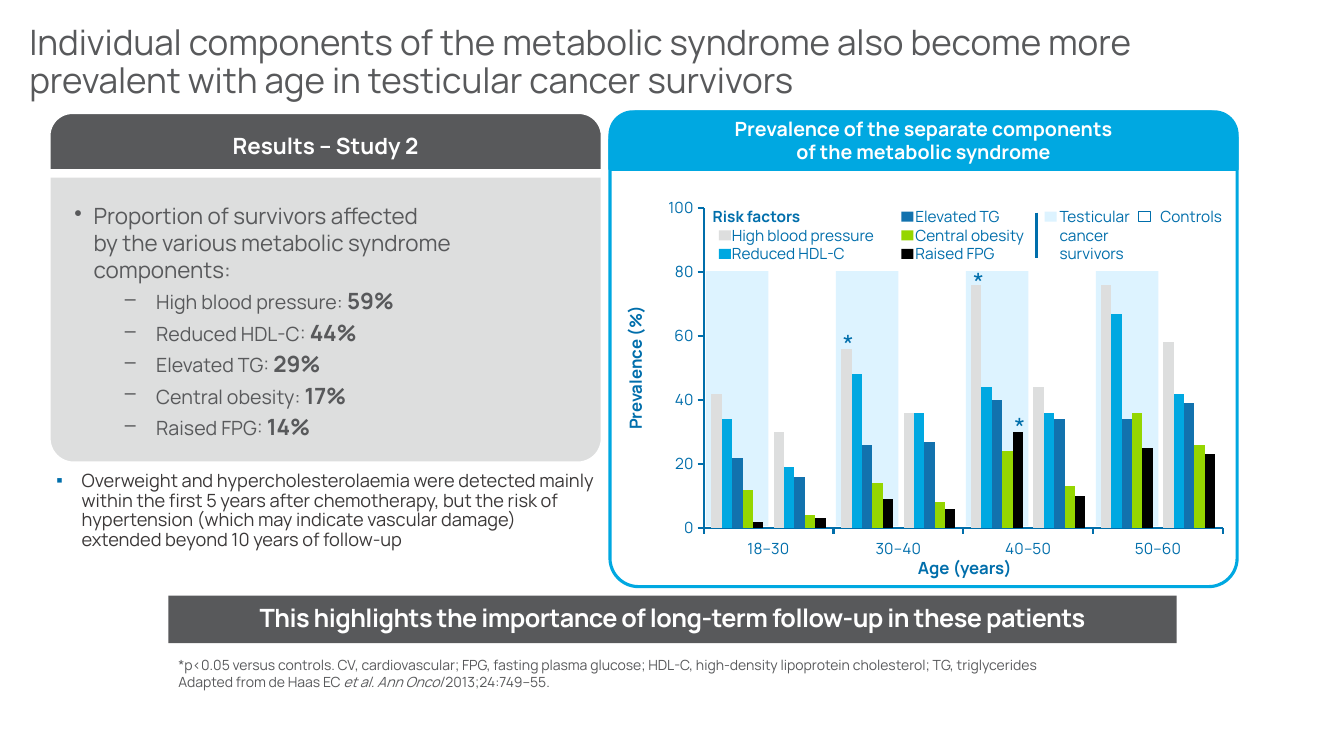
import dataclasses
import typing

import lxml.etree
import pptx
import pptx.chart.data
import pptx.dml.color
import pptx.enum.chart
import pptx.enum.shapes
import pptx.enum.text
import pptx.oxml
import pptx.oxml.ns
import pptx.util

Inches = pptx.util.Inches
Pt = pptx.util.Pt
qn = pptx.oxml.ns.qn
Shape = pptx.enum.shapes.MSO_SHAPE
Align = pptx.enum.text.PP_ALIGN
Anchor = pptx.enum.text.MSO_ANCHOR
Tick = pptx.enum.chart.XL_TICK_MARK

FONT = "Manrope"
HEX = {"slate": "58595B", "ink": "3B3838", "white": "FFFFFF", "silver": "DDDEDE", "sky": "00A8E1",
       "blue": "1272AE", "navy": "006EAB", "lime": "95D600", "black": "000000", "pale": "DDF3FF"}
Area = tuple[float, float, float, float]


@dataclasses.dataclass
class Bit:
    text: str
    size: float
    color: str = "slate"
    bold: bool = False
    slant: bool = False
    track: int = 0


@dataclasses.dataclass
class Para:
    bits: list[Bit]
    align: typing.Any = Align.LEFT
    left: float = 0
    hang: float = 0
    mark: str = ""
    hue: str = "slate"
    lines: float = 1
    before: float = 0
    level: int = 0
    tab: float = 0


@dataclasses.dataclass
class Block:
    area: Area
    fill: str
    kind: typing.Any = Shape.RECTANGLE
    round: tuple[float, ...] = ()
    line: str = ""
    width: float = 0
    turn: float = 0


@dataclasses.dataclass
class Label:
    area: Area
    paras: list[Para]
    anchor: typing.Any = Anchor.TOP
    wrap: bool = True
    turn: float = 0


def shade(name: str) -> pptx.dml.color.RGBColor:
    return pptx.dml.color.RGBColor.from_string(HEX[name])


def place(shape: typing.Any, area: Area) -> None:
    shape.left, shape.top, shape.width, shape.height = map(Inches, area)


def write(frame: typing.Any, paras: list[Para], anchor: typing.Any = Anchor.TOP, wrap: bool = True) -> None:
    frame.auto_size = pptx.enum.text.MSO_AUTO_SIZE.NONE
    frame.word_wrap, frame.vertical_anchor = wrap, anchor
    for n, item in enumerate(paras):
        para = frame.paragraphs[0] if n == 0 else frame.add_paragraph()
        props = para._p.get_or_add_pPr()
        props.set("marL", str(Inches(item.left)))
        props.set("indent", str(Inches(item.hang)))
        if item.mark:
            tint = lxml.etree.SubElement(props, qn("a:buClr"))
            lxml.etree.SubElement(tint, qn("a:srgbClr"), val=HEX[item.hue])
            lxml.etree.SubElement(props, qn("a:buChar"), char=item.mark)
        if item.tab:
            tabs = lxml.etree.SubElement(props, qn("a:tabLst"))
            lxml.etree.SubElement(tabs, qn("a:tab"), pos=str(Inches(item.tab)), algn="l")
        para.level, para.alignment = item.level, item.align
        para.line_spacing, para.space_before = item.lines, Pt(item.before)
        for bit in item.bits:
            for row, text in enumerate(bit.text.split("\n")):
                if row:
                    para.add_line_break()
                run = para.add_run()
                run.text = text
                font = run.font
                font.name, font.size = FONT, Pt(bit.size)
                font.bold, font.italic = bit.bold, bit.slant
                font.color.rgb = shade(bit.color)
                if bit.track:
                    run._r.get_or_add_rPr().set("spc", str(bit.track))


def draw(slide: typing.Any, block: Block) -> typing.Any:
    shape = slide.shapes.add_shape(block.kind, *map(Inches, block.area))
    shape.shadow.inherit = False
    shape.rotation = block.turn
    for n, value in enumerate(block.round):
        shape.adjustments[n] = value
    shape.fill.solid()
    shape.fill.fore_color.rgb = shade(block.fill)
    if block.line:
        shape.line.color.rgb = shade(block.line)
        shape.line.width = Pt(block.width)
    else:
        shape.line.fill.background()
    return shape


def label(slide: typing.Any, item: Label) -> None:
    box = slide.shapes.add_textbox(*map(Inches, item.area))
    box.rotation = item.turn
    write(box.text_frame, item.paras, item.anchor, item.wrap)


def clear(parent: typing.Any) -> typing.Any:
    """Return shape properties with neither fill nor line."""
    props = parent.makeelement(qn("c:spPr"))
    lxml.etree.SubElement(props, qn("a:noFill"))
    line = lxml.etree.SubElement(props, qn("a:ln"))
    lxml.etree.SubElement(line, qn("a:noFill"))
    return props


def plot(slide: typing.Any) -> None:
    data = pptx.chart.data.CategoryChartData()
    data.categories = ["18–30", "30–40", "40–50", "50–60"]
    rows = [(42, 56, 76, 76), (34, 48, 44, 67), (22, 26, 40, 34), (12, 14, 24, 36), (2, 9, 30, 25),
            (None,) * 4,
            (30, 36, 44, 58), (19, 36, 36, 42), (16, 27, 34, 39), (4, 8, 13, 26), (3, 6, 10, 23)]
    for n, row in enumerate(rows, 1):
        data.add_series(f"Series {n}", row)
    kind = pptx.enum.chart.XL_CHART_TYPE.COLUMN_CLUSTERED
    chart = slide.shapes.add_chart(kind, *map(Inches, (6.38, 1.35, 5.99, 4.47)), data).chart
    chart.has_legend = chart.has_title = False
    chart.font.name, chart.font.size = FONT, Pt(11)
    chart.font.color.rgb = shade("navy")
    bars = chart.plots[0]
    bars.gap_width, bars.overlap, bars.vary_by_categories = 150, 0, False
    hues = ["silver", "sky", "blue", "lime", "black", "white"]
    for n, series in enumerate(bars.series):
        series.format.fill.solid()
        series.format.fill.fore_color.rgb = shade(hues[n % len(hues)])
    for axis in (chart.category_axis, chart.value_axis):
        axis.has_major_gridlines = False
        axis.major_tick_mark, axis.minor_tick_mark = Tick.OUTSIDE, Tick.NONE
        axis.tick_labels.font.size = Pt(11)
        axis.format.line.color.rgb = shade("navy")
        axis.format.line.width = Pt(1.5)
    chart.category_axis.tick_label_position = pptx.enum.chart.XL_TICK_LABEL_POSITION.LOW
    scale = chart.value_axis
    scale.minimum_scale, scale.maximum_scale, scale.major_unit = 0, 100, 20
    space = chart._chartSpace
    space.find(qn("c:chart")).addnext(clear(space))
    area = space.find(".//" + qn("c:plotArea"))
    area.append(clear(area))
    for old in area.findall(qn("c:layout")):
        area.remove(old)
    layout = area.makeelement(qn("c:layout"))
    manual = lxml.etree.SubElement(layout, qn("c:manualLayout"))
    parts = {"layoutTarget": "inner", "xMode": "edge", "yMode": "edge",
             "x": "0.1", "y": "0.16", "w": "0.86", "h": "0.71"}
    for name, value in parts.items():
        lxml.etree.SubElement(manual, qn("c:" + name), val=value)
    area.insert(0, layout)


def study(slide: typing.Any) -> None:
    top = Shape.ROUND_2_SAME_RECTANGLE
    draw(slide, Block((0.46, 1.61, 5.54, 3.01), "silver", top, (0.09, 0), "white", 6, 180))
    head = draw(slide, Block((0.46, 1.09, 5.54, 0.63), "slate", top, (0.41, 0), "white", 6))
    write(head.text_frame, [Para([Bit("Results – Study 2", 16, "white", True)], Align.CENTER)], Anchor.MIDDLE)
    lead = "Proportion of survivors affected\nby the various metabolic syndrome components:"
    paras = [Para([Bit(lead, 16)], left=0.19, hang=-0.19, mark="•")]
    rates = {"High blood pressure": 59, "Reduced HDL-C": 44, "Elevated TG": 29,
             "Central obesity": 17, "Raised FPG": 14}
    for name, rate in rates.items():
        paras.append(Para([Bit(f"{name}: ", 14), Bit(f"{rate}%", 16, bold=True)],
                          left=0.81, hang=-0.31, mark="–", before=3.2, level=1))
    label(slide, Label((0.64, 1.96, 5.19, 2.52), paras))


def panel(slide: typing.Any) -> None:
    draw(slide, Block((6.05, 1.11, 6.22, 4.71), "white", Shape.ROUNDED_RECTANGLE, (0.06,), "sky", 2.25))
    draw(slide, Block((6.05, 1.11, 6.22, 0.57), "sky", Shape.ROUND_2_SAME_RECTANGLE, (0.4, 0), "sky", 2.25))
    name = Bit("Prevalence of the separate components\nof the metabolic syndrome", 14, "white", True)
    label(slide, Label((6.35, 1.11, 5.62, 0.57), [Para([name], Align.CENTER)]))
    for text, area, turn in (("Prevalence (%)", (5.58, 3.47, 1.44, 0.36), 270),
                             ("Age (years)", (8.86, 5.48, 1.42, 0.3), 0)):
        para = Para([Bit(text, 12, "navy", True)], Align.CENTER)
        label(slide, Label(area, [para], Anchor.MIDDLE, False, turn))
    for n in range(4):
        draw(slide, Block((7 + 1.29 * n, 2.69, 0.62, 2.53), "pale"))
    plot(slide)


def legend(slide: typing.Any) -> None:
    def entry(text: str, left: float = 0, bold: bool = False, tab: float = 0) -> Para:
        return Para([Bit(text, 11, "navy", bold)], left=left, tab=tab)

    first = [entry("Risk factors", bold=True), entry("High blood pressure", 0.19), entry("Reduced HDL-C", 0.19)]
    label(slide, Label((6.97, 2.01, 2.31, 0.66), first, wrap=False))
    names = ("Elevated TG", "Central obesity", "Raised FPG")
    label(slide, Label((8.98, 2.01, 1.62, 0.66), [entry(name) for name in names], wrap=False))
    label(slide, Label((10.41, 2.01, 2.31, 0.66), [entry("Testicular\tControls\ncancer\nsurvivors", tab=0.91)]))
    keys = [(8.94, 0, "blue"), (8.94, 1, "lime"), (8.94, 2, "black"),
            (7.13, 1, "silver"), (7.13, 2, "sky"), (10.36, 0, "pale"), (11.29, 0, "white")]
    for left, row, hue in keys:
        edge = "navy" if hue == "white" else ""
        draw(slide, Block((left, 2.1 + 0.185 * row, 0.12, 0.1), hue, line=edge, width=1))
    rule = slide.shapes.add_connector(pptx.enum.shapes.MSO_CONNECTOR.STRAIGHT,
                                      *map(Inches, (10.28, 2.11, 10.28, 2.56)))
    rule.line.color.rgb, rule.line.width = shade("navy"), Pt(1.5)
    lxml.etree.SubElement(rule._element.spPr, qn("a:effectLst"))
    for left, top in ((8.22, 3.21), (9.51, 2.59), (9.92, 4.03)):
        star = Para([Bit("*", 18, "navy")], Align.CENTER)
        label(slide, Label((left, top, 0.39, 0.4), [star], wrap=False))


def main() -> None:
    deck = pptx.Presentation()
    deck.slide_width, deck.slide_height = Inches(13.33), Inches(7.5)
    slide = deck.slides.add_slide(deck.slide_layouts[1])
    title, body = slide.shapes.title, slide.placeholders[1]
    place(title, (0.19, 0.17, 12.44, 0.91))
    write(title.text_frame, [Para([Bit("Individual components of the metabolic syndrome also become more "
                                       "prevalent with age in testicular cancer survivors", 25)], lines=0.9)],
          Anchor.MIDDLE)
    place(body, (0.46, 4.63, 5.56, 1.27))
    risk = Bit("Overweight and hypercholesterolaemia were detected mainly within the first 5 years after "
               "chemotherapy, but the risk of hypertension (which may indicate vascular damage) "
               "extended beyond 10 years of follow-up", 13, "ink")
    write(body.text_frame, [Para([risk], left=0.25, hang=-0.25, mark="▪", hue="navy", lines=0.9)])
    study(slide)
    banner = draw(slide, Block((1.67, 5.91, 10, 0.47), "slate"))
    claim = Bit("This highlights the importance of long-term follow-up in these patients", 18, "white", True, track=-40)
    write(banner.text_frame, [Para([claim], Align.CENTER, lines=0.9)], Anchor.MIDDLE)
    panel(slide)
    legend(slide)
    notes = [Para([Bit("*p<0.05 versus controls. CV, cardiovascular; FPG, fasting plasma glucose; HDL-C, "
                       "high-density lipoprotein cholesterol; TG, triglycerides", 10)]),
             Para([Bit("Adapted from de Haas EC ", 10), Bit("et al. Ann Oncol", 10, slant=True),
                   Bit(" 2013;24:749–55.", 10)])]
    label(slide, Label((1.67, 6.46, 10, 0.44), notes, Anchor.BOTTOM))
    deck.save("out.pptx")


if __name__ == "__main__":
    main()
